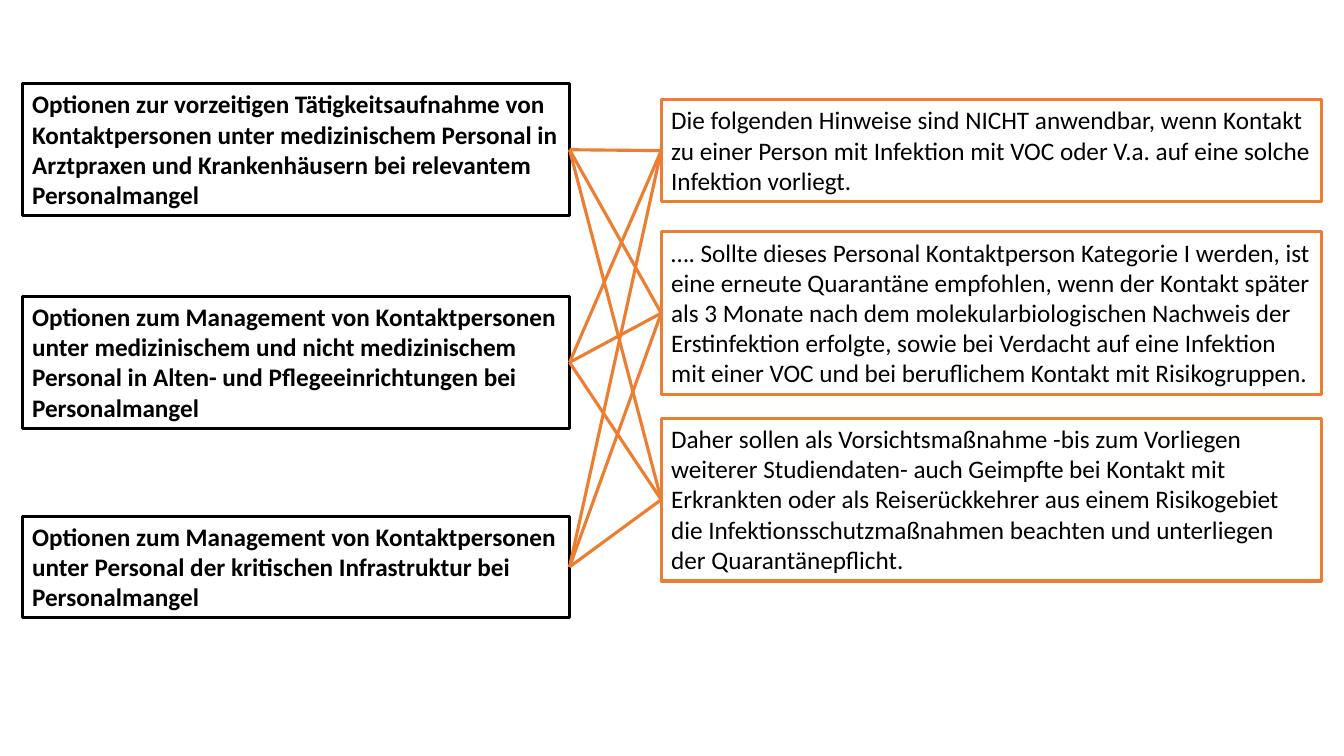
import dataclasses
import itertools

import pptx
import pptx.dml.color
import pptx.enum.shapes
import pptx.enum.text
import pptx.oxml.ns
import pptx.util
from lxml import etree

Pt = pptx.util.Pt
RIGHT_SIDE, LEFT_SIDE = 3, 1


@dataclasses.dataclass(frozen=True)
class Theme:
    text: str = "000000"
    option: str = "000000"
    notice: str = "ED7D31"
    font: str = "Calibri"
    text_size: float = 18
    line_width: float = 2.25
    line_height: float = 21.8
    padding: float = 7.2


class SlideBuilder:
    def __init__(self, slide, theme):
        self.slide = slide
        self.theme = theme

    def outline(self, line, color):
        line.color.rgb = pptx.dml.color.RGBColor.from_string(color)
        line.width = Pt(self.theme.line_width)

    def text_box(self, left, top, width, line_count, text, color, bold=False):
        """Add an outlined box whose height follows from its line count."""
        theme = self.theme
        height = line_count * theme.line_height + theme.padding
        shape = self.slide.shapes.add_textbox(Pt(left), Pt(top), Pt(width), Pt(height))
        self.outline(shape.line, color)
        text_frame = shape.text_frame
        text_frame.word_wrap = True
        text_frame.auto_size = pptx.enum.text.MSO_AUTO_SIZE.SHAPE_TO_FIT_TEXT
        text_frame.text = text
        font = text_frame.paragraphs[0].runs[0].font
        font.name = theme.font
        font.size = Pt(theme.text_size)
        font.bold = bold
        font.color.rgb = pptx.dml.color.RGBColor.from_string(theme.text)
        return shape

    def link(self, notice, option):
        """Join the left side of a notice to the right side of an option."""
        connector = self.slide.shapes.add_connector(
            pptx.enum.shapes.MSO_CONNECTOR.STRAIGHT, 0, 0, 0, 0)
        connector.begin_connect(notice, LEFT_SIDE)
        connector.end_connect(option, RIGHT_SIDE)
        self.outline(connector.line, self.theme.notice)
        etree.SubElement(connector._element.spPr, pptx.oxml.ns.qn("a:effectLst"))


# Each entry: top in points, number of text lines, text
OPTIONS = [
    (59.76, 4, "Optionen zur vorzeitigen Tätigkeitsaufnahme von Kontaktpersonen unter "
               "medizinischem Personal in Arztpraxen und Krankenhäusern bei relevantem "
               "Personalmangel"),
    (211.68, 4, "Optionen zum Management von Kontaktpersonen unter medizinischem und nicht "
                "medizinischem Personal in Alten- und Pflegeeinrichtungen bei "
                "Personalmangel"),
    (368.64, 3, "Optionen zum Management von Kontaktpersonen unter Personal der kritischen "
                "Infrastruktur bei Personalmangel"),
]
NOTICES = [
    (71.28, 3, "Die folgenden Hinweise sind NICHT anwendbar, wenn Kontakt zu einer Person "
               "mit Infektion mit VOC oder V.a. auf eine solche Infektion vorliegt."),
    (165.6, 5, "…. Sollte dieses Personal Kontaktperson Kategorie I werden, ist eine "
               "erneute Quarantäne empfohlen, wenn der Kontakt später als 3 Monate nach "
               "dem molekularbiologischen Nachweis der Erstinfektion erfolgte, sowie bei "
               "Verdacht auf eine Infektion mit einer VOC und bei beruflichem Kontakt mit "
               "Risikogruppen."),
    (298.8, 5, "Daher sollen als Vorsichtsmaßnahme -bis zum Vorliegen weiterer "
               "Studiendaten- auch Geimpfte bei Kontakt mit Erkrankten oder als "
               "Reiserückkehrer aus einem Risikogebiet die Infektionsschutzmaßnahmen "
               "beachten und unterliegen der Quarantänepflicht."),
]


def main():
    presentation = pptx.Presentation()
    presentation.slide_width = Pt(960)
    presentation.slide_height = Pt(540)
    blank_layout = presentation.slide_layouts[6]
    theme = Theme()
    builder = SlideBuilder(presentation.slides.add_slide(blank_layout), theme)

    options = [builder.text_box(15.84, top, 391, line_count, text, theme.option, bold=True)
               for top, line_count, text in OPTIONS]
    notices = [builder.text_box(472.32, top, 471.6, line_count, text, theme.notice)
               for top, line_count, text in NOTICES]
    for notice, option in itertools.product(notices, options):
        builder.link(notice, option)

    presentation.save("out.pptx")


if __name__ == "__main__":
    main()
